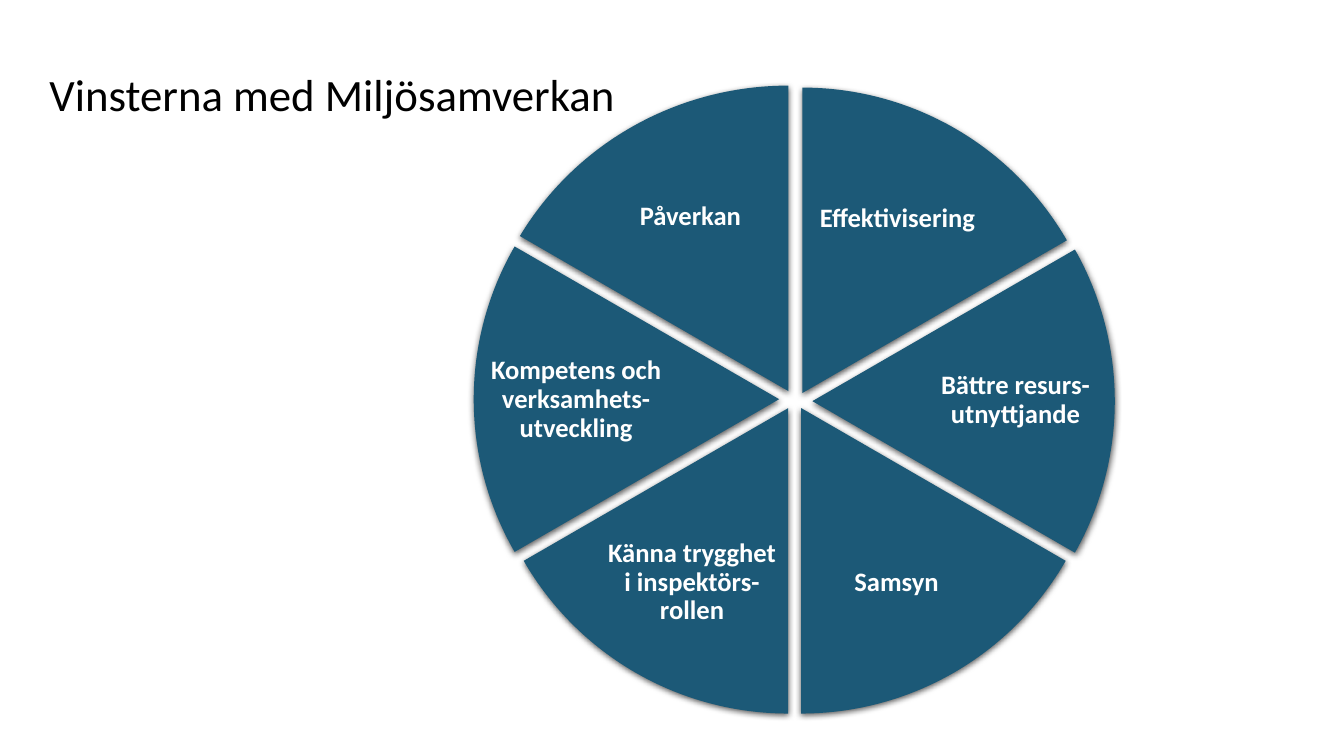
from dataclasses import dataclass
from typing import NamedTuple

from lxml.etree import SubElement
from pptx import Presentation
from pptx.dml.color import RGBColor
from pptx.enum.shapes import MSO_SHAPE as Shape
from pptx.enum.text import MSO_ANCHOR as Anchor, MSO_AUTO_SIZE as AutoSize, PP_ALIGN as Align
from pptx.oxml.ns import qn
from pptx.shapes.autoshape import Shape as AutoShape
from pptx.shapes.shapetree import GroupShapes
from pptx.text.text import TextFrame
from pptx.util import Pt


@dataclass(frozen=True)
class Theme:
    font: str = "Calibri"
    title_size: float = 32
    label_size: float = 19
    title_color: RGBColor = RGBColor(0, 0, 0)
    label_color: RGBColor = RGBColor(255, 255, 255)
    slice_color: RGBColor = RGBColor(0x1C, 0x59, 0x77)
    line_spacing: float = 0.9
    label_margin: float = 2.4


class Box(NamedTuple):
    left: float
    top: float
    width: float
    height: float

    def points(self) -> list[Pt]:
        return [Pt(v) for v in self]


class Slice(NamedTuple):
    text: str
    pie: Box
    label: Box


THEME = Theme()
DIAMETER = 436.3
FIRST_ANGLE = 270
TITLE_BOX = Box(28.1, 32.4, 479.5, 74.2)

# Clockwise from the top
SLICES = [
    Slice("Effektivisering", Box(355, 62.6, DIAMETER, DIAMETER),
          Box(577.4, 109.4, 127.4, 93.6)),
    Slice("Bättre resurs-utnyttjande", Box(364.3, 68.4, 432, DIAMETER),
          Box(660.2, 241.9, 130.3, 88.6)),
    Slice("Samsyn", Box(354.2, 73.4, DIAMETER, DIAMETER),
          Box(576.7, 369.4, 127.4, 93.6)),
    Slice("Känna trygghet i inspektörs-rollen", Box(344.9, 73.4, DIAMETER, DIAMETER),
          Box(430.6, 369.4, 127.4, 93.6)),
    Slice("Kompetens och verksamhets-utveckling", Box(338.4, 67, DIAMETER, DIAMETER),
          Box(345.6, 241.2, 131.8, 88.6)),
    Slice("Påverkan", Box(340.6, 61.2, 445, DIAMETER),
          Box(428.4, 108, 129.6, 93.6)),
]


def write(tf: TextFrame, text: str, size: float, color: RGBColor,
          align: Align, bold: bool) -> None:
    tf.word_wrap = True
    tf.auto_size = AutoSize.NONE
    tf.vertical_anchor = Anchor.MIDDLE
    tf.text = text
    p = tf.paragraphs[0]
    p.alignment = align
    p.line_spacing = THEME.line_spacing
    p.font.name = THEME.font
    p.font.size = Pt(size)
    p.font.bold = bold
    p.font.color.rgb = color


def add_shadow(sp: AutoShape) -> None:
    sp.shadow.inherit = False
    effects = sp._element.spPr.find(qn("a:effectLst"))
    shadow = SubElement(effects, qn("a:outerShdw"), blurRad=str(Pt(4.5)),
                        dist=str(Pt(1.5)), dir="5400000", rotWithShape="0")
    color = SubElement(shadow, qn("a:srgbClr"), val="000000")
    SubElement(color, qn("a:alpha"), val="63000")


def add_slice(shapes: GroupShapes, part: Slice, start: float, sweep: float) -> None:
    sp = shapes.add_shape(Shape.PIE, *part.pie.points())
    # A pie adjustment of 0.6 is one degree
    for i, angle in enumerate((start, start + sweep)):
        sp.adjustments[i] = angle % 360 * 0.6
    sp.fill.solid()
    sp.fill.fore_color.rgb = THEME.slice_color
    sp.line.fill.background()
    add_shadow(sp)

    tf = shapes.add_textbox(*part.label.points()).text_frame
    tf.margin_left = tf.margin_right = Pt(THEME.label_margin)
    tf.margin_top = tf.margin_bottom = Pt(THEME.label_margin)
    write(tf, part.text, THEME.label_size, THEME.label_color, Align.CENTER, True)


def main() -> None:
    prs = Presentation()
    prs.slide_width, prs.slide_height = Pt(960), Pt(540)
    slide = prs.slides.add_slide(prs.slide_layouts[5])

    # Title
    title = slide.shapes.title
    title.left, title.top, title.width, title.height = TITLE_BOX.points()
    write(title.text_frame, "Vinsterna med Miljösamverkan", THEME.title_size,
          THEME.title_color, Align.LEFT, False)

    # Wheel of benefits
    wheel = slide.shapes.add_group_shape()
    sweep = 360 / len(SLICES)
    for i, part in enumerate(SLICES):
        add_slice(wheel.shapes, part, FIRST_ANGLE + i * sweep, sweep)

    prs.save("out.pptx")


if __name__ == "__main__":
    main()
